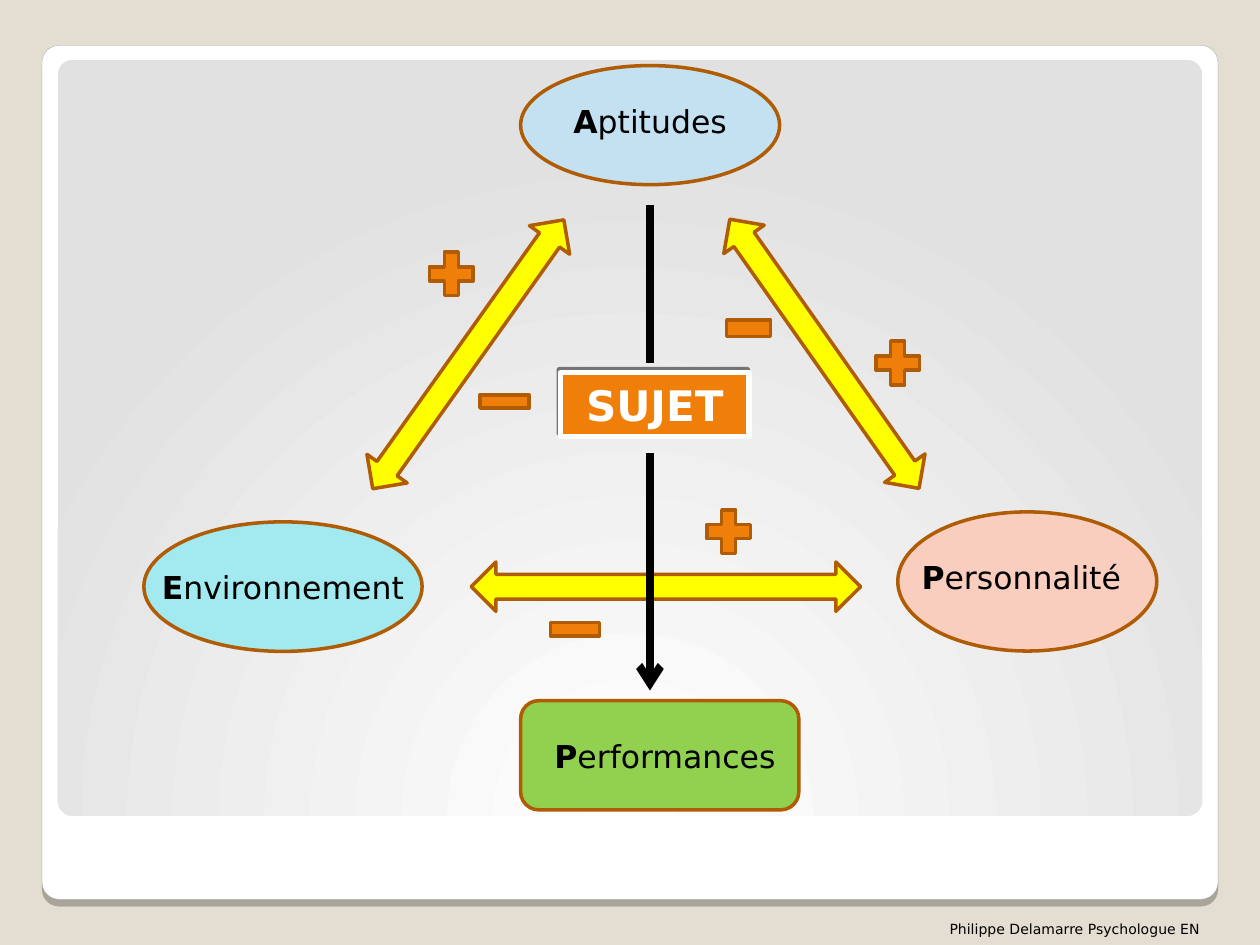
from pptx import Presentation
from pptx import util as u
from pptx.dml.color import RGBColor
from pptx.enum import shapes, text
from pptx.oxml import parse_xml
from pptx.oxml.ns import nsdecls, qn

Pt = u.Pt
MSO = shapes.MSO_SHAPE
FONT = "DejaVu Sans"
BEIGE = RGBColor(0xE3, 0xDE, 0xD1)
WHITE = RGBColor(0xFF, 0xFF, 0xFF)
BLACK = RGBColor(0, 0, 0)
GREY = RGBColor(0xA4, 0xA3, 0xA3)
ORANGE = RGBColor(0xF0, 0x7F, 0x09)
BROWN = RGBColor(0xB0, 0x5C, 0x05)
YELLOW = RGBColor(0xFF, 0xFF, 0x00)
BLUE = RGBColor(0xC4, 0xE1, 0xF2)
PINK = RGBColor(0xF9, 0xCE, 0xBF)
CYAN = RGBColor(0xA2, 0xE9, 0xF0)
GREEN = RGBColor(0x92, 0xD0, 0x50)

prs = Presentation()
prs.slide_width, prs.slide_height = Pt(720), Pt(540)
s = prs.slides.add_slide(prs.slide_layouts[6])
s.background.fill.solid()
s.background.fill.fore_color.rgb = BEIGE


def add_box(kind, x, y, w, h, fill, line=BROWN, width=2):
    sp = s.shapes.add_shape(kind, Pt(x), Pt(y), Pt(w), Pt(h))
    sp.shadow.inherit = False
    sp.fill.solid()
    sp.fill.fore_color.rgb = fill
    sp.line.color.rgb = line
    sp.line.width = Pt(width)
    return sp


def add_label(x, y, w, h, parts, size, align):
    tf = s.shapes.add_textbox(Pt(x), Pt(y), Pt(w), Pt(h)).text_frame
    tf.word_wrap = True
    tf.auto_size = text.MSO_AUTO_SIZE.SHAPE_TO_FIT_TEXT
    p = tf.paragraphs[0]
    p.alignment = align
    for content, bold in parts:
        r = p.add_run()
        r.text = content
        r.font.name, r.font.size, r.font.bold = FONT, Pt(size), bold
        r.font.color.rgb = BLACK


# White card and its grey panel
card = add_box(MSO.ROUNDED_RECTANGLE, 24, 25.9, 672, 488, WHITE, GREY, 0.16)
card.adjustments[0] = 0.02
panel = add_box(MSO.ROUNDED_RECTANGLE, 33, 34.2, 654, 432, WHITE)
panel.adjustments[0] = 0.02
panel.line.fill.background()
panel.fill.background()
no_fill = panel._element.spPr.find(qn("a:noFill"))
no_fill.addnext(parse_xml(
    f'<a:gradFill {nsdecls("a")} rotWithShape="1"><a:gsLst>'
    '<a:gs pos="0"><a:srgbClr val="FFFFFF"/></a:gs>'
    '<a:gs pos="100000"><a:srgbClr val="E1E1E1"/></a:gs></a:gsLst>'
    '<a:path path="circle"><a:fillToRect l="50000" t="175000" r="50000" b="-75000"/>'
    '</a:path></a:gradFill>'))
panel._element.spPr.remove(no_fill)

# Three poles: outline, then label
for x, y, w, h, fill in [(297.5, 37.5, 148, 68, BLUE),
                         (513, 292.5, 148, 79.5, PINK),
                         (82.2, 298.2, 159, 74, CYAN)]:
    add_box(MSO.OVAL, x, y, w, h, fill)
for x, y, w, initial, rest in [(297.5, 55, 148, "A", "ptitudes"),
                               (518.4, 315.5, 130.5, "P", "ersonnalité"),
                               (82.2, 321.3, 159, "E", "nvironnement")]:
    add_label(x, y, w, 29, [(initial, True), (rest, False)], 18, text.PP_ALIGN.CENTER)

# Double arrows between the poles
for x, y, h, angle in [(457, 108.2, 188, 324.9), (253.5, 108.2, 188.5, 35.4),
                       (366.4, 224, 222.5, 270)]:
    add_box(MSO.UP_DOWN_ARROW, x, y, 28.2, h, YELLOW).rotation = angle

# Central subject
subject = add_box(MSO.RECTANGLE, 320.4, 213, 107.6, 36.3, ORANGE, WHITE, 3)
tf = subject.text_frame
tf.word_wrap = True
tf.text = "SUJET"
p = tf.paragraphs[0]
p.alignment = text.PP_ALIGN.CENTER
f = p.runs[0].font
f.name, f.size, f.bold = FONT, Pt(24), True
f.color.rgb = WHITE

# Shadows: opacity in percent, distance in points, direction in degrees
for sp, alpha, dist, angle in [(card, 25, 4, 90), (subject, 50, 2, 245)]:
    sp._element.spPr.find(qn("a:effectLst")).append(parse_xml(
        f'<a:outerShdw {nsdecls("a")} blurRad="0" dist="{Pt(dist)}" dir="{angle * 60000}" '
        f'algn="ctr" rotWithShape="0"><a:srgbClr val="000000">'
        f'<a:alpha val="{alpha * 1000}"/></a:srgbClr></a:outerShdw>'))

# Vertical axis through the subject, with an arrowhead at the bottom
for top, bottom, head in [(117, 207.4, False), (258.8, 394.6, True)]:
    c = s.shapes.add_connector(shapes.MSO_CONNECTOR.STRAIGHT,
                               Pt(371.4), Pt(top), Pt(371.4), Pt(bottom))
    c.line.color.rgb = BLACK
    c.line.width = Pt(4.5)
    if head:
        c.line._get_or_add_ln().append(parse_xml(f'<a:tailEnd {nsdecls("a")} type="arrow"/>'))
    c._element.spPr.append(parse_xml(f'<a:effectLst {nsdecls("a")}/>'))

# Performances
add_box(MSO.ROUNDED_RECTANGLE, 297.5, 400.4, 159, 62.4, GREEN)
add_label(309, 417.8, 142, 29, [("P", True), ("erformances", False)], 18,
          text.PP_ALIGN.CENTER)

# Plus and minus signs
for kind, x, y, w, h in [(MSO.MATH_PLUS, 240.9, 139.5, 34, 34),
                         (MSO.MATH_MINUS, 269.2, 213.2, 38.3, 32.4),
                         (MSO.MATH_PLUS, 496, 190.5, 34, 34),
                         (MSO.MATH_MINUS, 410.8, 167.8, 34, 39.6),
                         (MSO.MATH_PLUS, 399.4, 286.8, 34, 34),
                         (MSO.MATH_MINUS, 309.4, 343.3, 38.3, 32.4)]:
    add_box(kind, x, y, w, h, ORANGE)

# Footer
add_label(535.5, 522.7, 170, 17, [("Philippe Delamarre Psychologue EN", False)], 8,
          text.PP_ALIGN.LEFT)

prs.save("out.pptx")
